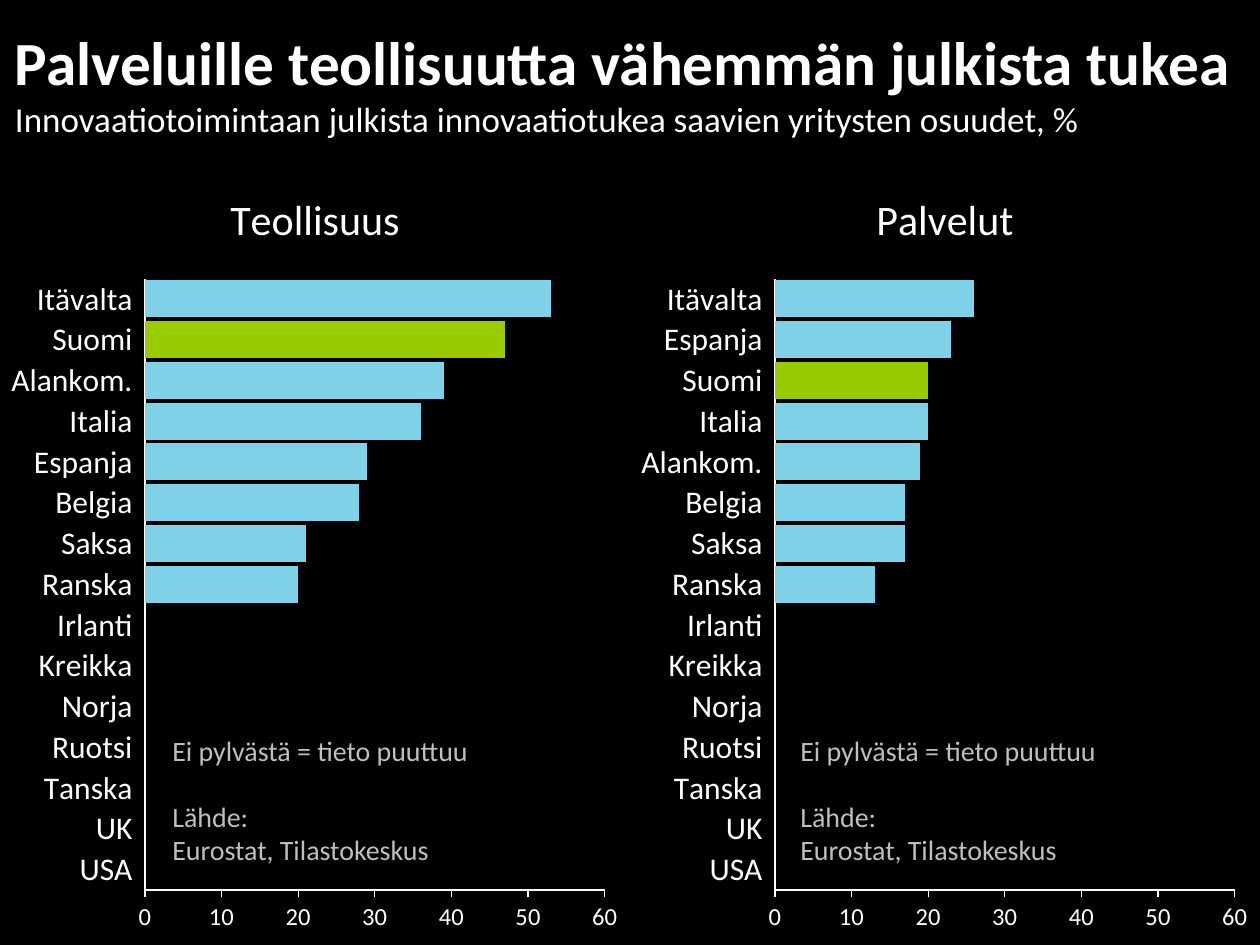
from lxml.etree import SubElement
from pptx import Presentation
from pptx.chart.data import CategoryChartData
from pptx.dml.color import RGBColor
from pptx.enum.chart import XL_CHART_TYPE, XL_TICK_LABEL_POSITION, XL_TICK_MARK
from pptx.enum.text import MSO_ANCHOR, MSO_AUTO_SIZE, PP_ALIGN
from pptx.oxml.ns import qn
from pptx.util import Emu, Pt

PX = 914400 / 126
THEME = {
    "font": "Calibri",
    "bg": RGBColor(0x00, 0x00, 0x00),
    "text": RGBColor(0xFF, 0xFF, 0xFF),
    "note": RGBColor(0xBF, 0xBF, 0xBF),
    "bar": RGBColor(0x7E, 0xD1, 0xE6),
    "finland": RGBColor(0x99, 0xCC, 0x00),
    "title": 35, "subtitle": 20, "chart_title": 24,
    "category": 18, "note_size": 16, "tick": 14,
}


def px(*lengths):
    return [Emu(round(n * PX)) for n in lengths]


def write(p, text, size, color=THEME["text"], bold=False):
    p.alignment = PP_ALIGN.LEFT
    r = p.add_run()
    r.text = text
    r.font.name = THEME["font"]
    r.font.size = Pt(size)
    r.font.bold = bold
    r.font.color.rgb = color


prs = Presentation()
prs.slide_width, prs.slide_height = px(1260, 945)
s = prs.slides.add_slide(prs.slide_layouts[5])
s.background.fill.solid()
s.background.fill.fore_color.rgb = THEME["bg"]

# Title and subtitle
sp = s.shapes.title
sp.left, sp.top, sp.width, sp.height = px(15, 24, 1225, 117)
tf = sp.text_frame
tf.margin_left = tf.margin_right = tf.margin_top = tf.margin_bottom = 0
tf.vertical_anchor = MSO_ANCHOR.TOP
tf.auto_size = MSO_AUTO_SIZE.NONE
tf.word_wrap = True
write(tf.paragraphs[0], "Palveluille teollisuutta vähemmän julkista tukea",
      THEME["title"], bold=True)
write(tf.add_paragraph(),
      "Innovaatiotoimintaan julkista innovaatiotukea saavien yritysten osuudet, %",
      THEME["subtitle"])

# Countries from bottom to top; those without data come first
no_data = ["USA", "UK", "Tanska", "Ruotsi", "Norja", "Kreikka", "Irlanti"]
panels = [
    ("Teollisuus", 0, 160,
     {"Ranska": 20, "Saksa": 21, "Belgia": 28, "Espanja": 29,
      "Italia": 36, "Alankom.": 39, "Suomi": 47, "Itävalta": 53}),
    ("Palvelut", 630, 788,
     {"Ranska": 13, "Saksa": 17, "Belgia": 17, "Alankom.": 19,
      "Italia": 20, "Suomi": 20, "Espanja": 23, "Itävalta": 26}),
]
plot_area = {"x": 0.23, "y": 0.15, "w": 0.73, "h": 0.78}

for name, left, note_left, shares in panels:
    # Bar chart
    cats = no_data + list(shares)
    data = CategoryChartData(number_format="#,##0")
    data.categories = cats
    data.add_series(name, [shares.get(c) for c in cats])
    chart = s.shapes.add_chart(XL_CHART_TYPE.BAR_STACKED,
                               *px(left, 161, 630, 784), data).chart
    chart.has_legend = False
    chart.font.name = THEME["font"]
    chart.font.size = Pt(THEME["tick"])
    chart.font.color.rgb = THEME["text"]
    chart.has_title = True
    write(chart.chart_title.text_frame.paragraphs[0], name, THEME["chart_title"])
    chart.chart_title.include_in_layout = False

    # Bars, with Finland highlighted
    plot = chart.plots[0]
    plot.gap_width = 10
    plot.overlap = 100
    plot.vary_by_categories = False
    series = plot.series[0]
    finland = series.points[cats.index("Suomi")]
    for part, color in ((series, THEME["bar"]), (finland, THEME["finland"])):
        part.format.fill.solid()
        part.format.fill.fore_color.rgb = color

    # Axes
    cat_ax, val_ax = chart.category_axis, chart.value_axis
    for ax, width in ((cat_ax, 1), (val_ax, 0.75)):
        ax.has_major_gridlines = False
        ax.minor_tick_mark = XL_TICK_MARK.NONE
        ax.format.line.color.rgb = THEME["text"]
        ax.format.line.width = Pt(width)
    cat_ax.major_tick_mark = XL_TICK_MARK.NONE
    cat_ax.tick_label_position = XL_TICK_LABEL_POSITION.LOW
    cat_ax.tick_labels.font.size = Pt(THEME["category"])
    val_ax.major_tick_mark = XL_TICK_MARK.OUTSIDE
    val_ax.minimum_scale, val_ax.maximum_scale, val_ax.major_unit = 0, 60, 10
    val_ax.tick_labels.number_format = "#,##0"
    val_ax.tick_labels.number_format_is_linked = False

    # Fixed inner plot area, alike in both charts
    area = chart.element.find(".//" + qn("c:plotArea"))
    for old in area.findall(qn("c:layout")):
        area.remove(old)
    layout = SubElement(area, qn("c:layout"))
    area.insert(0, layout)
    manual = SubElement(layout, qn("c:manualLayout"))
    settings = {"layoutTarget": "inner", "xMode": "edge", "yMode": "edge", **plot_area}
    for tag, value in settings.items():
        SubElement(manual, qn("c:" + tag)).set("val", str(value))

    # Missing-data note and source
    for top, width, height, lines in (
            (727, 333, 47, ["Ei pylvästä = tieto puuttuu"]),
            (793, 285, 81, ["Lähde:", "Eurostat, Tilastokeskus"])):
        tf = s.shapes.add_textbox(*px(note_left, top, width, height)).text_frame
        tf.word_wrap = False
        tf.auto_size = MSO_AUTO_SIZE.SHAPE_TO_FIT_TEXT
        for i, line in enumerate(lines):
            p = tf.add_paragraph() if i else tf.paragraphs[0]
            write(p, line, THEME["note_size"], color=THEME["note"])

prs.save("out.pptx")
